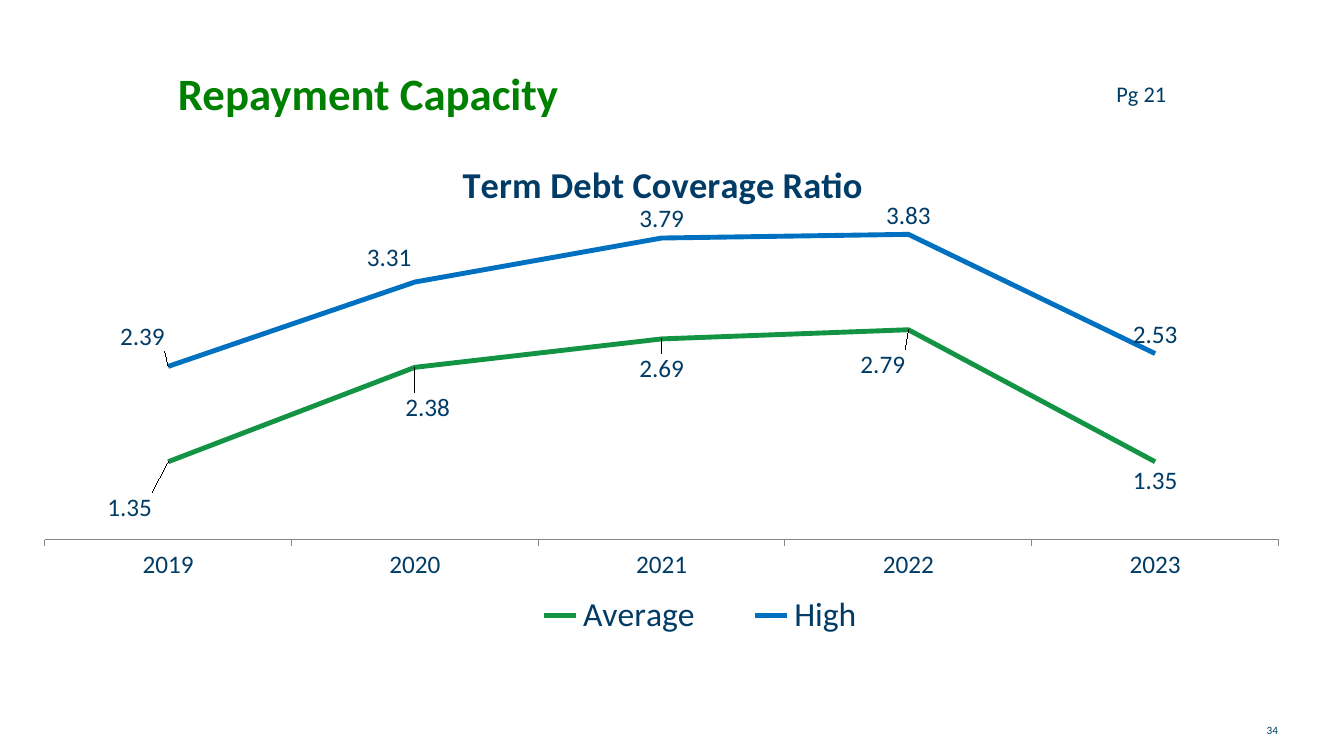
import pptx
import pptx.chart.data
import pptx.dml.color
import pptx.enum.chart
import pptx.enum.text
import pptx.oxml
import pptx.oxml.ns
import pptx.util
from pptx.util import Cm

COLORS = {
    "text": "003C66",
    "title": "008000",
    "average": "139445",
    "high": "0070C0",
    "axis": "868686",
}
FONT = "Calibri"
YEARS = ["2019", "2020", "2021", "2022", "2023"]
POSITION = pptx.enum.chart.XL_LABEL_POSITION

# Name, colour, values, label side, label shifts by point (share of chart size)
SERIES = [
    ("Average", "average", [1.35, 2.38, 2.69, 2.79, 1.35], POSITION.BELOW,
     [(-0.03, 0.05), (0.01, 0.04), (0, 0.02), (-0.02, 0.03)]),
    ("High", "high", [2.39, 3.31, 3.79, 3.83, 2.53], POSITION.ABOVE,
     [(-0.02, -0.02), (-0.02, -0.01)]),
]


def rgb(name):
    return pptx.dml.color.RGBColor.from_string(COLORS[name])


def set_font(font, size, color="text", bold=False):
    font.name = FONT
    font.size = pptx.util.Pt(size)
    font.bold = bold
    font.color.rgb = rgb(color)


def set_layout(element, index, **values):
    """Give a chart part a manual layout as its child number index."""
    for layout in element.findall(pptx.oxml.ns.qn("c:layout")):
        element.remove(layout)
    children = "".join(f'<c:{tag} val="{value}"/>' for tag, value in values.items())
    element.insert(index, pptx.oxml.parse_xml(
        f'<c:layout {pptx.oxml.ns.nsdecls("c")}>'
        f"<c:manualLayout>{children}</c:manualLayout></c:layout>"))


def add_title(slide, text):
    title = slide.shapes.title
    title.left, title.top, title.width, title.height = Cm(4.23), Cm(1.06), Cm(14.4), Cm(2.54)
    title.text_frame.text = text
    title.text_frame.vertical_anchor = pptx.enum.text.MSO_ANCHOR.MIDDLE
    paragraph = title.text_frame.paragraphs[0]
    paragraph.alignment = pptx.enum.text.PP_ALIGN.LEFT
    set_font(paragraph.font, 32, "title", bold=True)


def add_label(slide, text, left, top, width, height, size, wrap=True):
    box = slide.shapes.add_textbox(Cm(left), Cm(top), Cm(width), Cm(height))
    box.text_frame.word_wrap = wrap
    box.text_frame.text = text
    paragraph = box.text_frame.paragraphs[0]
    paragraph.alignment = pptx.enum.text.PP_ALIGN.RIGHT
    set_font(paragraph.font, size)


def format_series(series, color, position, shifts):
    series.smooth = False
    series.marker.style = pptx.enum.chart.XL_MARKER_STYLE.NONE
    series.format.line.color.rgb = rgb(color)
    series.format.line.width = pptx.util.Pt(3.5)
    labels = series.data_labels
    labels.show_value = True
    labels.position = position
    set_font(labels.font, 18)
    for index in range(len(shifts)):
        series.points[index].data_label.position = position
    for label, (x, y) in zip(series._element.xpath("c:dLbls/c:dLbl"), shifts):
        set_layout(label, 1, x=x, y=y)


def add_line_chart(slide):
    data = pptx.chart.data.CategoryChartData(number_format="0.00")
    data.categories = YEARS
    for name, _, values, _, _ in SERIES:
        data.add_series(name, values)
    frame = slide.shapes.add_chart(
        pptx.enum.chart.XL_CHART_TYPE.LINE, Cm(0.48), Cm(3.18), Cm(32.39), Cm(13.26), data)
    chart = frame.chart
    set_font(chart.font, 18)

    # Lines and their labels
    plot = chart.plots[0]
    plot.vary_by_categories = False
    for series, (_, color, _, position, shifts) in zip(plot.series, SERIES):
        format_series(series, color, position, shifts)

    # Axes
    chart.value_axis.minimum_scale = 0.5
    chart.value_axis.maximum_scale = 4
    chart.value_axis.has_major_gridlines = False
    chart.value_axis.visible = False
    chart.category_axis.major_tick_mark = pptx.enum.chart.XL_TICK_MARK.OUTSIDE
    chart.category_axis.format.line.color.rgb = rgb("axis")

    # Title and legend
    chart.has_title = True
    chart.chart_title.text_frame.text = "Term Debt Coverage Ratio"
    set_font(chart.chart_title.text_frame.paragraphs[0].font, 26, bold=True)
    chart.has_legend = True
    chart.legend.position = pptx.enum.chart.XL_LEGEND_POSITION.BOTTOM
    chart.legend.include_in_layout = False
    set_font(chart.legend.font, 24)

    # Places inside the chart
    set_layout(chart.chart_title._element, 1, xMode="edge", yMode="edge", x=0.34, y=0.05)
    set_layout(chart.legend._element, 1, xMode="edge", yMode="edge",
               x=0.37, y=0.88, w=0.32, h=0.1)
    plot_area = chart._chartSpace.xpath("c:chart/c:plotArea")[0]
    set_layout(plot_area, 0, layoutTarget="inner", xMode="edge", yMode="edge",
               x=0.02, y=0.176, w=0.96, h=0.61)


def main():
    presentation = pptx.Presentation()
    presentation.slide_width = Cm(33.87)
    presentation.slide_height = Cm(19.05)
    slide = presentation.slides.add_slide(presentation.slide_layouts[5])

    add_label(slide, "34", 31.6, 18.11, 0.86, 0.61, 8, wrap=False)
    add_line_chart(slide)
    add_title(slide, "Repayment Capacity")
    add_label(slide, "Pg 21", 26.67, 1.9, 2.97, 0.94, 16)
    presentation.save("out.pptx")


if __name__ == "__main__":
    main()
